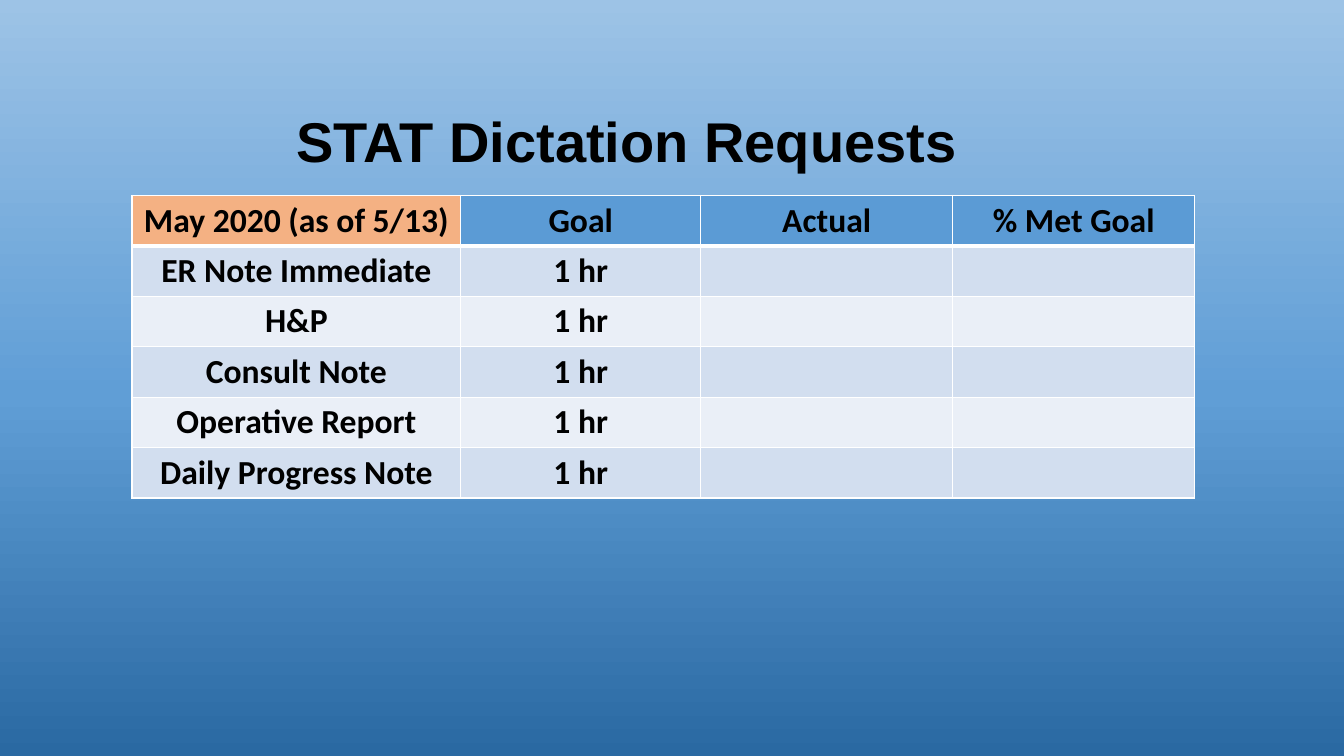
from copy import deepcopy
from dataclasses import dataclass

from pptx import Presentation
from pptx import util as u
from pptx.dml.color import RGBColor
from pptx.enum import text
from pptx.oxml import parse_xml
from pptx.oxml.ns import nsdecls


@dataclass(frozen=True)
class Theme:
    ink: str = "000000"
    line: str = "FFFFFF"
    head: str = "5B9BD5"
    month: str = "F4B183"
    bands: tuple = ("D2DEEF", "EAEFF7")
    sky: tuple = ((0, "2A69A2"), (0.48, "609ED6"), (1, "9DC3E6"))
    title: tuple = ("Arial", 40)
    body: tuple = ("Calibri", 24)


THEME = Theme()
HEADS = ("May 2020 (as of 5/13)", "Goal", "Actual", "% Met Goal")
NOTES = ("ER Note Immediate", "H&P", "Consult Note", "Operative Report",
         "Daily Progress Note")
GOAL = "1 hr"
WIDTHS = (3.26, 2.38, 2.5, 2.4)


def style(font, face):
    name, size = face
    for key, value in {"name": name, "size": u.Pt(size), "bold": True}.items():
        setattr(font, key, value)
    font.color.rgb = RGBColor.from_string(THEME.ink)


def paint(slide):
    """Give the slide its three-stop background gradient."""
    fill = slide.background.fill
    fill.gradient()
    fill.gradient_angle = 90
    stops = slide._element.xpath(".//a:gsLst")[0]
    stops.append(deepcopy(stops[0]))
    for stop, (place, color) in zip(fill.gradient_stops, THEME.sky):
        stop.position = place
        stop.color.rgb = RGBColor.from_string(color)


def add_title(slide, box, words):
    frame = slide.shapes.add_textbox(*map(u.Inches, box)).text_frame
    frame.word_wrap = True
    frame.auto_size = text.MSO_AUTO_SIZE.SHAPE_TO_FIT_TEXT
    run = frame.paragraphs[0].add_run()
    run.text = words
    style(run.font, THEME.title)


def edge(cell, widths):
    """Draw the cell borders, given widths in points by side."""
    props = cell._tc.get_or_add_tcPr()
    for i, (side, width) in enumerate(widths.items()):
        props.insert(i, parse_xml(
            f'<a:ln{side} {nsdecls("a")} w="{u.Pt(width)}"><a:solidFill>'
            f'<a:srgbClr val="{THEME.line}"/></a:solidFill></a:ln{side}>'))


def fill_cell(cell, words, color, rule):
    """Set text, fill and borders; rule is the (top, bottom) line widths."""
    form = {"vertical_anchor": text.MSO_ANCHOR.MIDDLE,
            "margin_top": u.Inches(0.04), "margin_bottom": u.Inches(0.04)}
    for key, value in form.items():
        setattr(cell, key, value)
    edge(cell, {"L": 1, "R": 1, "T": rule[0], "B": rule[1]})
    cell.fill.solid()
    cell.fill.fore_color.rgb = RGBColor.from_string(color)
    if words:
        para = cell.text_frame.paragraphs[0]
        para.alignment = text.PP_ALIGN.CENTER
        run = para.add_run()
        run.text = words
        style(run.font, THEME.body)


def add_goals(slide, box):
    rows = [HEADS] + [(note, GOAL, "", "") for note in NOTES]
    table = slide.shapes.add_table(
        len(rows), len(HEADS), *map(u.Inches, box)).table
    for col, width in zip(table.columns, WIDTHS):
        col.width = u.Inches(box[2] * width / sum(WIDTHS))
    for r, row in enumerate(rows):
        table.rows[r].height = u.Inches(box[3] / len(rows))
        rule = (3 if r == 1 else 1, 3 if r == 0 else 1)
        for c, words in enumerate(row):
            if r:
                color = THEME.bands[(r - 1) % 2]
            else:
                color = THEME.head if c else THEME.month
            fill_cell(table.cell(r, c), words, color, rule)


def main():
    deck = Presentation()
    deck.slide_width, deck.slide_height = u.Inches(13.33), u.Inches(7.5)
    slide = deck.slides.add_slide(deck.slide_layouts[6])
    paint(slide)
    add_goals(slide, (1.31, 1.94, 10.54, 3))
    add_title(slide, (2.84, 1.01, 7.16, 0.77), "STAT Dictation Requests")
    deck.save("out.pptx")


if __name__ == "__main__":
    main()
